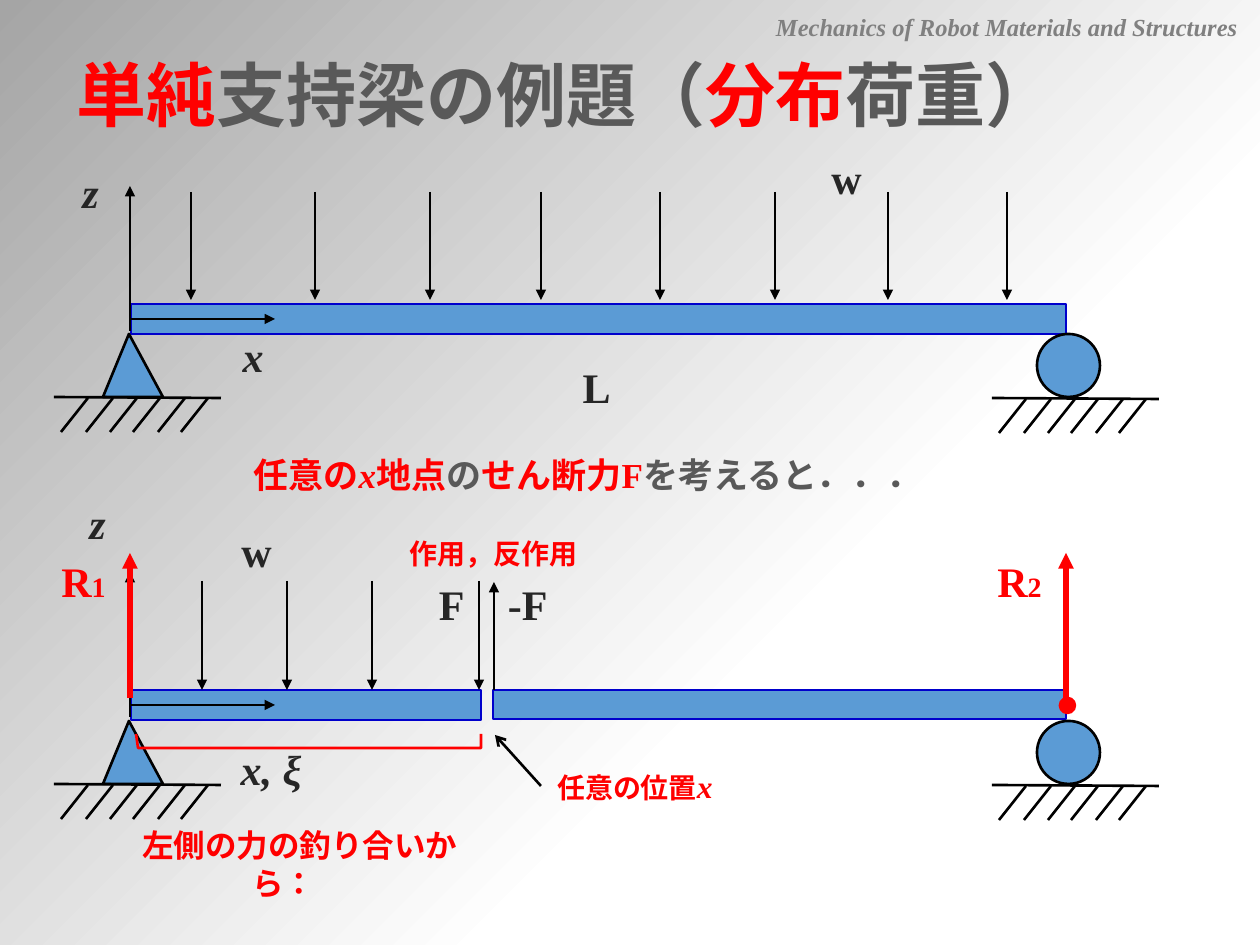
import pptx
import pptx.util
import pptx.oxml
import pptx.dml.color
import pptx.enum.lang
import pptx.enum.shapes
import pptx.enum.text
import lxml.etree

PX = 914400 / 126
SHAPE = pptx.enum.shapes.MSO_SHAPE
ALIGN = pptx.enum.text.PP_ALIGN
LEFT, CENTER, RIGHT = ALIGN.LEFT, ALIGN.CENTER, ALIGN.RIGHT
NS = "http://schemas.openxmlformats.org/drawingml/2006/main"
COLORS = {name: pptx.dml.color.RGBColor.from_string(code) for name, code in {
    "red": "FF0000", "black": "000000", "ink": "262626", "grey": "595959",
    "header": "808080", "beam": "5B9BD5", "edge": "0000CC"}.items()}


def write(box, spans, align, font="Times New Roman"):
    """Fill a box with one paragraph of (text, size, colour, italic) spans."""
    box.text_frame.word_wrap = True
    para = box.text_frame.paragraphs[0]
    para.alignment = align
    for text, size, color, italic in spans:
        span = para.add_run()
        span.text = text
        formats = {"name": font, "size": pptx.util.Pt(size), "bold": True, "italic": italic,
                   "language_id": pptx.enum.lang.MSO_LANGUAGE_ID.JAPANESE}
        for key, value in formats.items():
            setattr(span.font, key, value)
        span.font.color.rgb = COLORS[color]


def draw_line(parent, x1, y1, x2, y2, head=None, color="black", width=1.5):
    """Draw a straight line, with an arrowhead at its end if one is named."""
    line = parent.add_connector(pptx.enum.shapes.MSO_CONNECTOR.STRAIGHT,
                                *(round(v * PX) for v in (x1, y1, x2, y2)))
    line.line.color.rgb = COLORS[color]
    line.line.width = pptx.util.Pt(width)
    if head:
        outline = line.line._get_or_add_ln()
        lxml.etree.SubElement(outline, f"{{{NS}}}tailEnd", type=head)
    lxml.etree.SubElement(line._element.spPr, f"{{{NS}}}effectLst")
    return line


deck = pptx.Presentation()
deck.slide_width, deck.slide_height = pptx.util.Inches(10), pptx.util.Inches(7.5)
page = deck.slides.add_slide(deck.slide_layouts[5])
shapes = page.shapes

# Background: radial gradient centred on the bottom right corner
page.background.fill.gradient()
gradient = page.background._cSld.bg.bgPr.find(f"{{{NS}}}gradFill")
gradient.getparent().replace(gradient, pptx.oxml.parse_xml(
    f'<a:gradFill xmlns:a="{NS}" rotWithShape="1"><a:gsLst>'
    '<a:gs pos="0"><a:srgbClr val="FFFFFF"><a:alpha val="70000"/></a:srgbClr></a:gs>'
    '<a:gs pos="35000"><a:srgbClr val="FFFFFF"/></a:gs>'
    '<a:gs pos="100000"><a:srgbClr val="A5A5A5"/></a:gs></a:gsLst>'
    '<a:path path="circle"><a:fillToRect l="100000" t="100000"/></a:path></a:gradFill>'))

# Title
title = shapes.title
for key, value in {"left": 64, "top": 53, "width": 1027, "height": 91}.items():
    setattr(title, key, round(value * PX))
write(title, [("単純", 40, "red", False), ("支持梁の例題（", 40, "grey", False),
              ("分布", 40, "red", False), ("荷重）", 40, "grey", False)], LEFT, "Calibri")
title.text_frame.vertical_anchor = pptx.enum.text.MSO_ANCHOR.MIDDLE
title.text_frame.auto_size = pptx.enum.text.MSO_AUTO_SIZE.NONE
title.text_frame.paragraphs[0].line_spacing = 0.9

# Beams, roller supports and the dot where R2 acts
solids = []
for kind, x, y, w, h, fill, edge in [
        (SHAPE.RECTANGLE, 131, 304, 935, 30, "beam", "edge"),
        (SHAPE.RECTANGLE, 131, 690, 350, 30, "beam", "edge"),
        (SHAPE.RECTANGLE, 493, 690, 573, 29, "beam", "edge"),
        (SHAPE.OVAL, 1037, 334, 63, 63, "beam", "black"),
        (SHAPE.OVAL, 1037, 721, 63, 63, "beam", "black"),
        (SHAPE.OVAL, 1060, 698, 15, 15, "red", "red")]:
    solids.append(shapes.add_shape(kind, *(round(v * PX) for v in (x, y, w, h))))
    solids[-1].fill.solid()
    solids[-1].fill.fore_color.rgb = COLORS[fill]
    solids[-1].line.color.rgb = COLORS[edge]

# Pin supports and the bracket under the left part
for points, closed, edge in [
        ([(129, 334), (103, 397), (163, 397)], True, "black"),
        ([(129, 721), (103, 784), (163, 784)], True, "black"),
        ([(136, 734), (138, 748), (481, 748), (481, 734)], False, "red")]:
    builder = shapes.build_freeform(*points[0], scale=PX)
    builder.add_line_segments(points[1:], close=closed)
    outline = builder.convert_to_shape()
    if closed:
        outline.fill.solid()
        outline.fill.fore_color.rgb = COLORS["beam"]
    else:
        outline.fill.background()
    outline.line.color.rgb = COLORS[edge]
    solids.append(outline)
for solid in solids:
    solid.shadow.inherit = False
    solid.line.width = pptx.util.Pt(1.5)

# Hatched ground under each support
for x, y in [(54, 397), (992, 398), (54, 784), (992, 785)]:
    ground = page.shapes.add_group_shape().shapes
    draw_line(ground, x + 167, y + 1, x, y)
    for step in (154, 131, 106, 83, 59, 34):
        draw_line(ground, x + step, y + 1, x + step - 27, y + 35)

# Axes of both diagrams
for beam, y in [(solids[0], 319), (solids[1], 705)]:
    draw_line(shapes, 131, y, 275, y, "triangle").begin_connect(beam, 1)
    draw_line(shapes, 130, y + 12, 130, y - 133, "triangle")

# Distributed load, cut forces and reactions
for x in (191, 315, 430, 541, 660, 775, 888, 1007):
    draw_line(shapes, x, 192, x, 300, "triangle")
for x in (202, 287, 372, 479):
    draw_line(shapes, x, 581, x, 690, "triangle")
draw_line(shapes, 494, 690, 494, 582, "triangle")
for x in (130, 1066):
    draw_line(shapes, x, 698, x, 553, "triangle", "red", 3)
draw_line(shapes, 541, 786, 495, 735, "arrow")

# Labels
for x, y, w, h, align, spans in [
        (759, 6, 496, 43, CENTER,
         [("Mechanics of Robot Materials and Structures", 14, "header", True)]),
        (38, 160, 73, 63, RIGHT, [("z", 24, "ink", True)]),
        (795, 146, 79, 63, RIGHT, [("w", 24, "ink", False)]),
        (203, 324, 73, 63, RIGHT, [("x", 24, "ink", True)]),
        (534, 355, 89, 63, RIGHT, [("L", 24, "ink", False)]),
        (185, 447, 805, 55, CENTER,
         [("任意の", 20, "red", False), ("x", 20, "red", True), ("地点", 20, "red", False),
          ("の", 20, "grey", False), ("せん断力F", 20, "red", False),
          ("を考えると．．．", 20, "grey", False)]),
        (45, 491, 73, 63, RIGHT, [("z", 24, "ink", True)]),
        (205, 519, 79, 63, RIGHT, [("w", 24, "ink", False)]),
        (29, 549, 89, 63, RIGHT, [("R", 24, "red", False), ("1", 16, "red", False)]),
        (965, 549, 89, 63, RIGHT, [("R", 24, "red", False), ("2", 16, "red", False)]),
        (374, 530, 239, 47, CENTER, [("作用，反作用", 16, "red", False)]),
        (388, 572, 89, 63, RIGHT, [("F", 24, "ink", False)]),
        (471, 572, 89, 63, RIGHT, [("-F", 24, "ink", False)]),
        (174, 737, 140, 63, RIGHT, [("x, ξ", 24, "ink", True)]),
        (529, 761, 212, 50, CENTER, [("任意の位置", 16, "red", False), ("x", 18, "red", True)]),
        (87, 820, 425, 50, CENTER, [("左側の力の釣り合いから：　", 18, "red", False)])]:
    box = shapes.add_textbox(*(round(v * PX) for v in (x, y, w, h)))
    write(box, spans, align)

deck.save("out.pptx")
